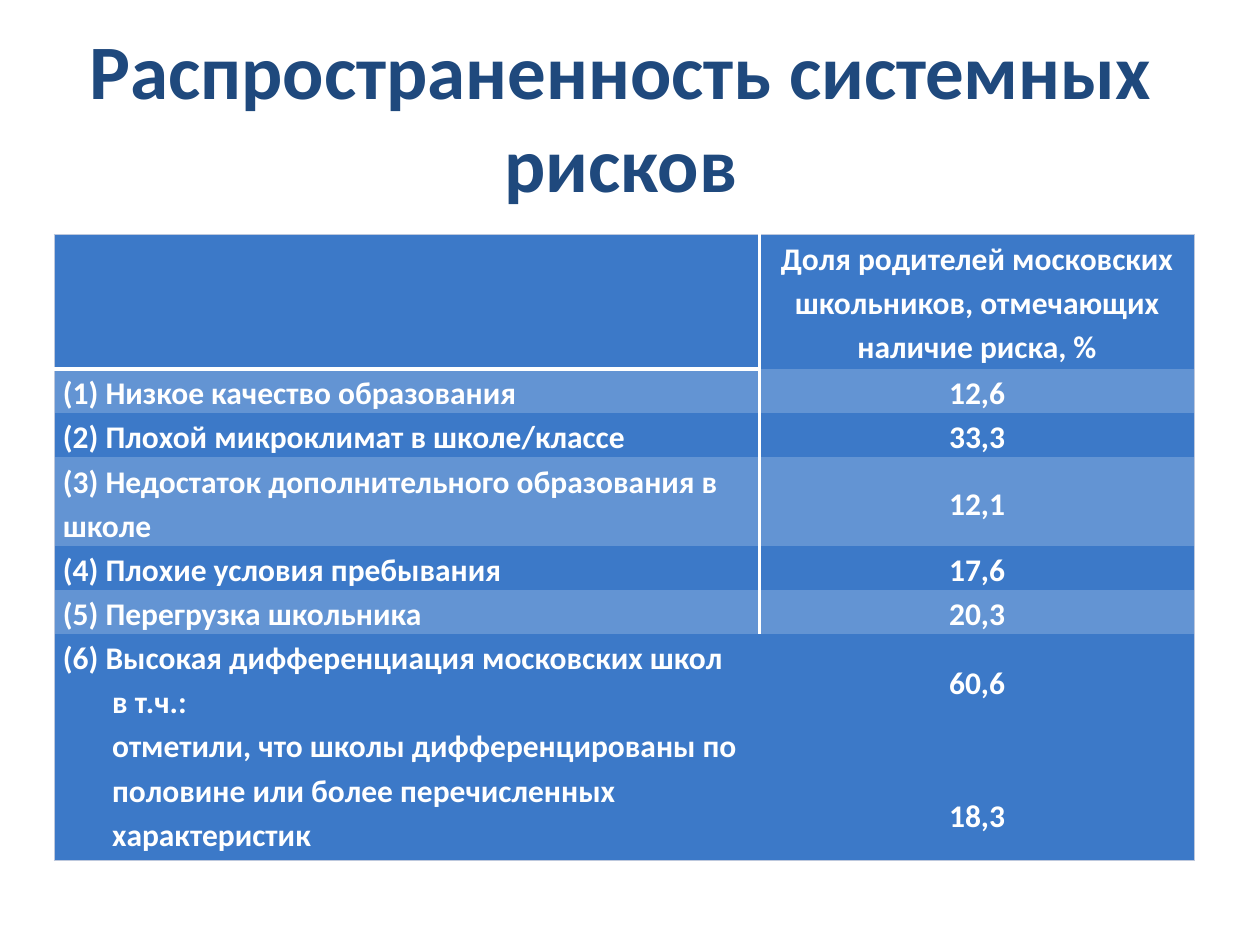
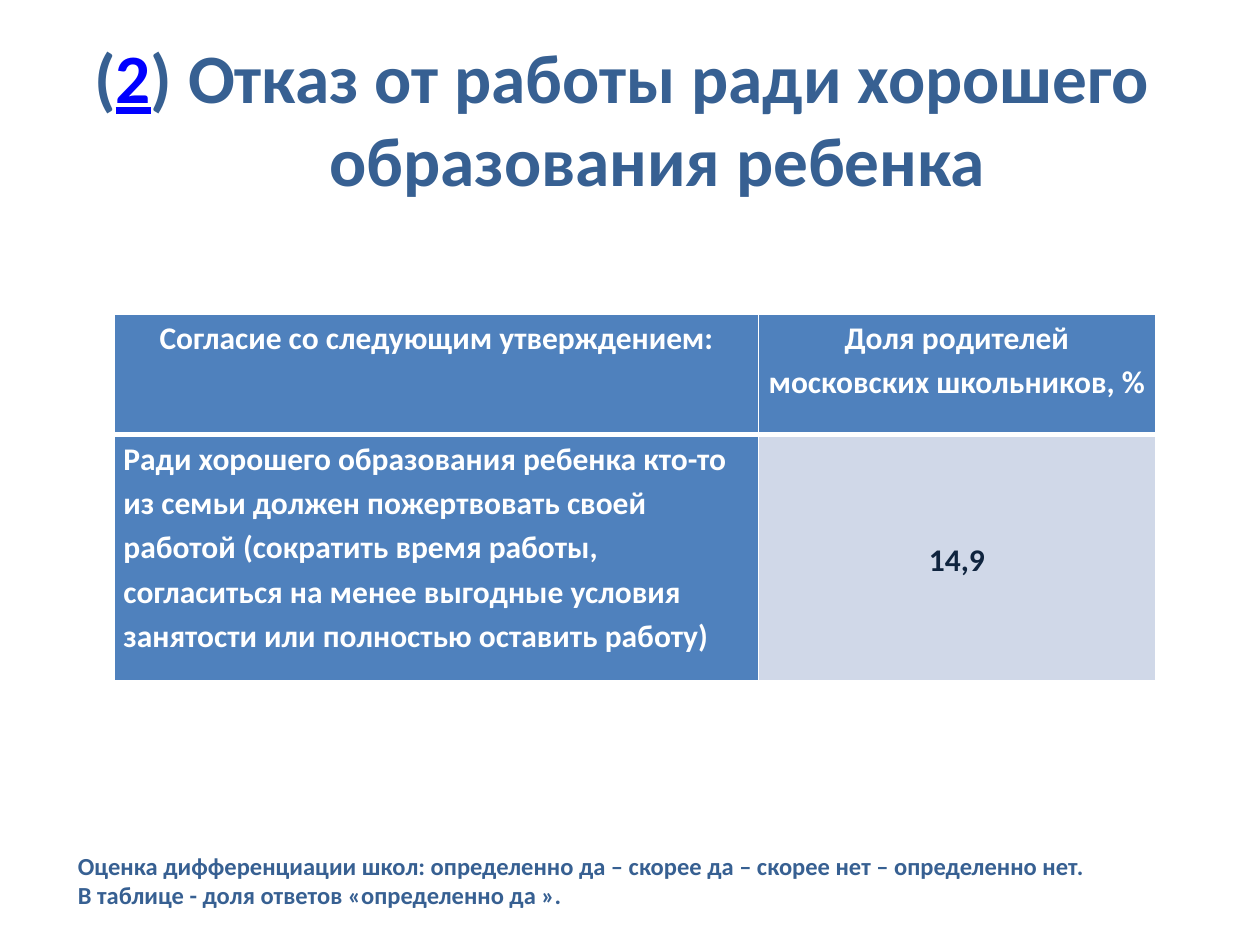
from lxml import etree
from pptx import Presentation
from pptx.dml.color import RGBColor
from pptx.enum.text import MSO_ANCHOR, PP_ALIGN
from pptx.oxml.ns import qn
from pptx.util import Inches, Pt

CENTER, LEFT = PP_ALIGN.CENTER, PP_ALIGN.LEFT
TOP, MIDDLE = MSO_ANCHOR.TOP, MSO_ANCHOR.MIDDLE

THEME = {
    "font": "Calibri", "white": "FFFFFF", "title": "1F497D", "accent": "376092",
    "link": "0000FF", "base": "3C79C8", "band": "6394D3", "head": "4F81BD",
    "value_fill": "D0D8E8", "value_text": "0F243E", "frame": "BDC8DD",
    "title_size": 44, "title_small": 39.6, "cell_size": 18, "note_size": 14,
    "line_spacing": 1.15, "indent": 0.39,
}

# Content
RISK_TITLE = [("Распространенность системных рисков", "title")]
RISKS = [
    ([""], ["Доля родителей московских школьников, отмечающих наличие риска, %"]),
    (["(1) Низкое качество образования"], ["12,6"]),
    (["(2) Плохой микроклимат в школе/классе"], ["33,3"]),
    (["(3) Недостаток дополнительного образования в школе"], ["12,1"]),
    (["(4) Плохие условия пребывания"], ["17,6"]),
    (["(5) Перегрузка школьника"], ["20,3"]),
    (["(6) Высокая дифференциация московских школ", "в т.ч.:",
      "отметили, что школы дифференцированы по половине или более "
      "перечисленных характеристик"], ["60,6", "18,3"]),
]
JOB_TITLE = [("(", "accent"), ("2", "link"),
             (") Отказ от работы ради хорошего образования ребенка ", "accent")]
JOB = [
    (["Согласие со следующим утверждением:"],
     ["Доля родителей московских школьников, %"]),
    (["Ради хорошего образования ребенка кто-то из семьи должен пожертвовать "
      "своей работой (сократить время работы, согласиться на менее выгодные "
      "условия занятости или полностью оставить работу)"], ["14,9"]),
]
NOTE = ["Оценка дифференциации школ: определенно да – скорее да – скорее нет – "
        "определенно нет.",
        "В таблице - доля ответов «определенно да »."]

# Rules of the tables: (colour, points)
FRAME = ("frame", 0.75)
THIN, MEDIUM, THICK = [("white", w) for w in (1, 2, 3)]


def rgb(name):
    return RGBColor.from_string(THEME[name])


def style(p, size, color):
    for r in p.runs:
        f = r.font
        f.name, f.size, f.bold = THEME["font"], Pt(size), True
        f.color.rgb = rgb(color)


def add_box(slide, at):
    tf = slide.shapes.add_textbox(*map(Inches, at)).text_frame
    tf.word_wrap = True
    tf.vertical_anchor = MIDDLE
    return tf


def add_title(slide, at, parts, size, hanging=0):
    p = add_box(slide, at).paragraphs[0]
    p.alignment = CENTER
    if hanging:
        pPr = p._p.get_or_add_pPr()
        pPr.set("marL", str(Inches(hanging)))
        pPr.set("indent", str(-Inches(hanging)))
    for text, color in parts:
        r = p.add_run()
        r.text = text
        f = r.font
        f.name, f.size, f.bold = THEME["font"], Pt(size), True
        f.color.rgb = rgb(color)
        f.underline = color == "link"


def add_note(slide, at, lines):
    tf = add_box(slide, at)
    tf.text = "\n".join(lines)
    for p in tf.paragraphs:
        style(p, THEME["note_size"], "accent")


def set_borders(cell, left, right, top, bottom):
    tcPr = cell._tc.get_or_add_tcPr()
    sides = {"L": left, "R": right, "T": top, "B": bottom}
    for i, (side, rule) in enumerate(sides.items()):
        ln = etree.Element(qn("a:ln" + side))
        if rule:
            color, width = rule
            ln.set("w", str(Pt(width)))
            fill = etree.SubElement(ln, qn("a:solidFill"))
            etree.SubElement(fill, qn("a:srgbClr")).set("val", THEME[color])
        else:
            etree.SubElement(ln, qn("a:noFill"))
        tcPr.insert(i, ln)


def add_grid(slide, left, top, cols, heights, rows, look, h_rules, v_rules):
    """look(r, c) gives fill and text colour; the rules give each cell edge."""
    tbl = slide.shapes.add_table(len(rows), len(cols), Inches(left), Inches(top),
                                 Inches(sum(cols)), Inches(sum(heights))).table
    for c, width in enumerate(cols):
        tbl.columns[c].width = Inches(width)
    for r, row in enumerate(rows):
        tbl.rows[r].height = Inches(heights[r])
        for c, lines in enumerate(row):
            cell = tbl.cell(r, c)
            fill, color = look(r, c)
            cell.fill.solid()
            cell.fill.fore_color.rgb = rgb(fill)
            cell.margin_left = cell.margin_right = Inches(0.07)
            cell.margin_top = cell.margin_bottom = 0
            cell.vertical_anchor = MIDDLE if r and c else TOP
            cell.text_frame.text = "\n".join(lines)
            for i, p in enumerate(cell.text_frame.paragraphs):
                p.alignment = LEFT if r and not c else CENTER
                p.line_spacing = THEME["line_spacing"]
                if i and c:  # sub-value stands level with its label
                    p.space_before = Pt(50.5)
                elif i:
                    p._p.get_or_add_pPr().set("marL", str(Inches(THEME["indent"])))
                style(p, THEME["cell_size"], color)
            set_borders(cell, v_rules(r, c), v_rules(r, c + 1),
                        h_rules(r, c), h_rules(r + 1, c))


def risk_h_rule(r, c):
    if r in (0, len(RISKS)):
        return FRAME
    return THICK if (r, c) == (1, 0) else None


def risk_v_rule(r, c):
    if c != 1:
        return FRAME
    return MEDIUM if r < len(RISKS) - 1 else None


def risk_look(r, c):
    return ("band" if r % 2 else "base"), "white"


def job_look(r, c):
    return ("value_fill", "value_text") if r and c else ("head", "white")


def main():
    prs = Presentation()
    prs.slide_width, prs.slide_height = Inches(10), Inches(7.5)
    blank = prs.slide_layouts[6]

    # Prevalence of risks
    s = prs.slides.add_slide(blank)
    add_title(s, (0.28, 0.29, 9.3, 1.25), RISK_TITLE, THEME["title_size"])
    line = 0.35
    add_grid(s, 0.43, 1.86, (5.6, 3.45),
             (1.07, line, line, 2 * line, line, line, 1.8),
             RISKS, risk_look, risk_h_rule, risk_v_rule)

    # Giving up work for a child's education
    s = prs.slides.add_slide(blank)
    add_title(s, (0.13, 0.29, 9.61, 1.28), JOB_TITLE, THEME["title_small"], 0.69)
    add_note(s, (0.52, 6.7, 9.21, 0.57), NOTE)
    add_grid(s, 0.91, 2.49, (5.11, 3.15), (0.96, 1.95), JOB, job_look,
             lambda r, c: THICK if r == 1 else THIN, lambda r, c: THIN)

    prs.save("out.pptx")


if __name__ == "__main__":
    main()
